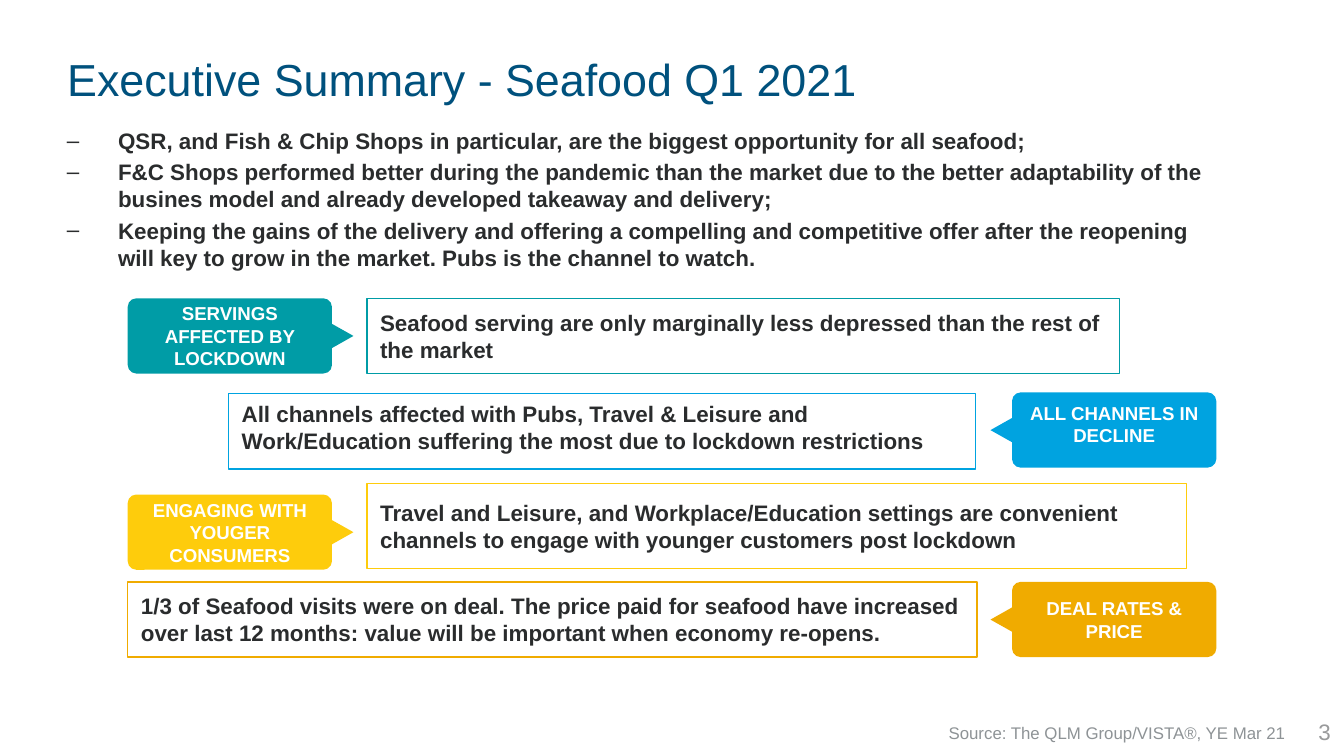
from lxml import etree
from pptx import Presentation
from pptx.dml.color import RGBColor
from pptx.enum import shapes, text
from pptx.oxml import ns
from pptx.util import Inches, Pt

TITLE = "Executive Summary - Seafood Q1 2021"
FINDINGS = [
    "QSR, and Fish & Chip Shops in particular, are the biggest opportunity for all seafood;",
    "F&C Shops performed better during the pandemic than the market due to the better "
    "adaptability of the busines model and already developed takeaway and delivery;",
    "Keeping the gains of the delivery and offering a compelling and competitive offer after "
    "the reopening will key to grow in the market. Pubs is the channel to watch.",
]
SOURCE = "Source: The QLM Group/VISTA®, YE Mar 21"
PAGE_NUMBER = "3"

MIDDLE, TOP = text.MSO_ANCHOR.MIDDLE, text.MSO_ANCHOR.TOP
LEFT, CENTER, RIGHT = text.PP_ALIGN.LEFT, text.PP_ALIGN.CENTER, text.PP_ALIGN.RIGHT
INK, WHITE = "2A2C2D", "FFFFFF"

# label, message, colour, label side, label top, message box, anchor
CALLOUTS = [
    ("SERVINGS AFFECTED BY LOCKDOWN",
     "Seafood serving are only marginally less depressed than the rest of the market",
     "009CA6", "left", 2.22, (2.73, 2.22, 5.6, 0.56), MIDDLE),
    ("ALL CHANNELS IN DECLINE",
     "All channels affected with Pubs, Travel & Leisure and Work/Education suffering "
     "the most due to lockdown restrictions",
     "00A3E0", "right", 2.92, (1.7, 2.93, 5.56, 0.56), TOP),
    ("ENGAGING WITH YOUGER CONSUMERS",
     "Travel and Leisure, and Workplace/Education settings are convenient channels "
     "to engage with younger customers post lockdown",
     "FECC0C", "left", 3.68, (2.73, 3.6, 6.1, 0.63), MIDDLE),
    ("DEAL RATES & PRICE",
     "1/3 of Seafood visits were on deal. The price paid for seafood have increased "
     "over last 12 months: value will be important when economy re-opens.",
     "F0AB00", "right", 4.33, (0.95, 4.33, 6.32, 0.56), MIDDLE),
]
LABEL_SIZE = (1.52, 0.56)
POINTER_SIZE = (0.18, 0.16)
# label left, pointer left, pointer rotation
SIDES = {"left": (0.95, 2.46, 90), "right": (7.53, 7.36, 270)}


def rgb(value):
    return RGBColor.from_string(value)


def inches(values):
    return [Inches(value) for value in values]


def write(shape, lines, size, color, bold=False, align=LEFT, anchor=MIDDLE):
    frame = shape.text_frame
    frame.word_wrap = True
    frame.auto_size = text.MSO_AUTO_SIZE.NONE
    frame.vertical_anchor = anchor
    frame.text = "\n".join(lines)
    for para in frame.paragraphs:
        para.alignment = align
        font = para.font
        font.name, font.size, font.bold = "Arial", Pt(size), bold
        font.color.rgb = rgb(color)
    return frame.paragraphs


def add_box(parent, kind, place, fill=None, line=None):
    box = parent.shapes.add_shape(kind, *inches(place))
    box.shadow.inherit = False
    if fill:
        box.fill.solid()
        box.fill.fore_color.rgb = rgb(fill)
    else:
        box.fill.background()
    if line:
        box.line.color.rgb = rgb(line)
        box.line.width = Pt(0.75)
    else:
        box.line.fill.background()
    return box


def add_dash(para, indent):
    """Give a paragraph a dash bullet with a hanging indent."""
    props = para._p.get_or_add_pPr()
    props.set("marL", str(Inches(indent)))
    props.set("indent", str(-Inches(indent)))
    run_defaults = props.find(ns.qn("a:defRPr"))
    run_defaults.addprevious(etree.Element(ns.qn("a:buFont"), typeface="Arial"))
    run_defaults.addprevious(etree.Element(ns.qn("a:buChar"), char="–"))


def add_callout(page, label, message, color, side, top, place, anchor):
    group = page.shapes.add_group_shape()
    label_left, pointer_left, rotation = SIDES[side]
    tag = add_box(group, shapes.MSO_SHAPE.ROUNDED_RECTANGLE,
                  (label_left, top, *LABEL_SIZE), fill=color)
    tag.adjustments[0] = 0.114
    write(tag, [label], 10, WHITE, True, CENTER, anchor)
    pointer = add_box(group, shapes.MSO_SHAPE.ISOSCELES_TRIANGLE,
                      (pointer_left, top + 0.2, *POINTER_SIZE), fill=color)
    pointer.rotation = rotation
    panel = add_box(group, shapes.MSO_SHAPE.RECTANGLE, place, line=color)
    write(panel, [message], 12, INK, True, LEFT, anchor)


def main():
    deck = Presentation()
    deck.slide_width = Inches(10)
    deck.slide_height = deck.slide_width * 9 // 16
    page = deck.slides.add_slide(deck.slide_layouts[5])

    title = page.shapes.title
    title.left, title.top, title.width, title.height = inches((0.4, 0.23, 9.17, 0.71))
    write(title, [TITLE], 24, "00517D")

    number = page.shapes.add_textbox(*inches((9.4, 5.29, 0.6, 0.31)))
    write(number, [PAGE_NUMBER], 12, "999A9B", align=RIGHT)

    findings = page.shapes.add_textbox(*inches((0.4, 0.91, 8.85, 1.14)))
    for para in write(findings, FINDINGS, 12, INK, bold=True):
        para.space_before = Pt(2.4)
        add_dash(para, 0.38)

    source = page.shapes.add_textbox(*inches((6.96, 5.33, 2.95, 0.3)))
    for para in write(source, [SOURCE], 9, "8E9396", anchor=TOP):
        para.space_before = Pt(1.8)

    for callout in CALLOUTS:
        add_callout(page, *callout)
    deck.save("out.pptx")


if __name__ == "__main__":
    main()
